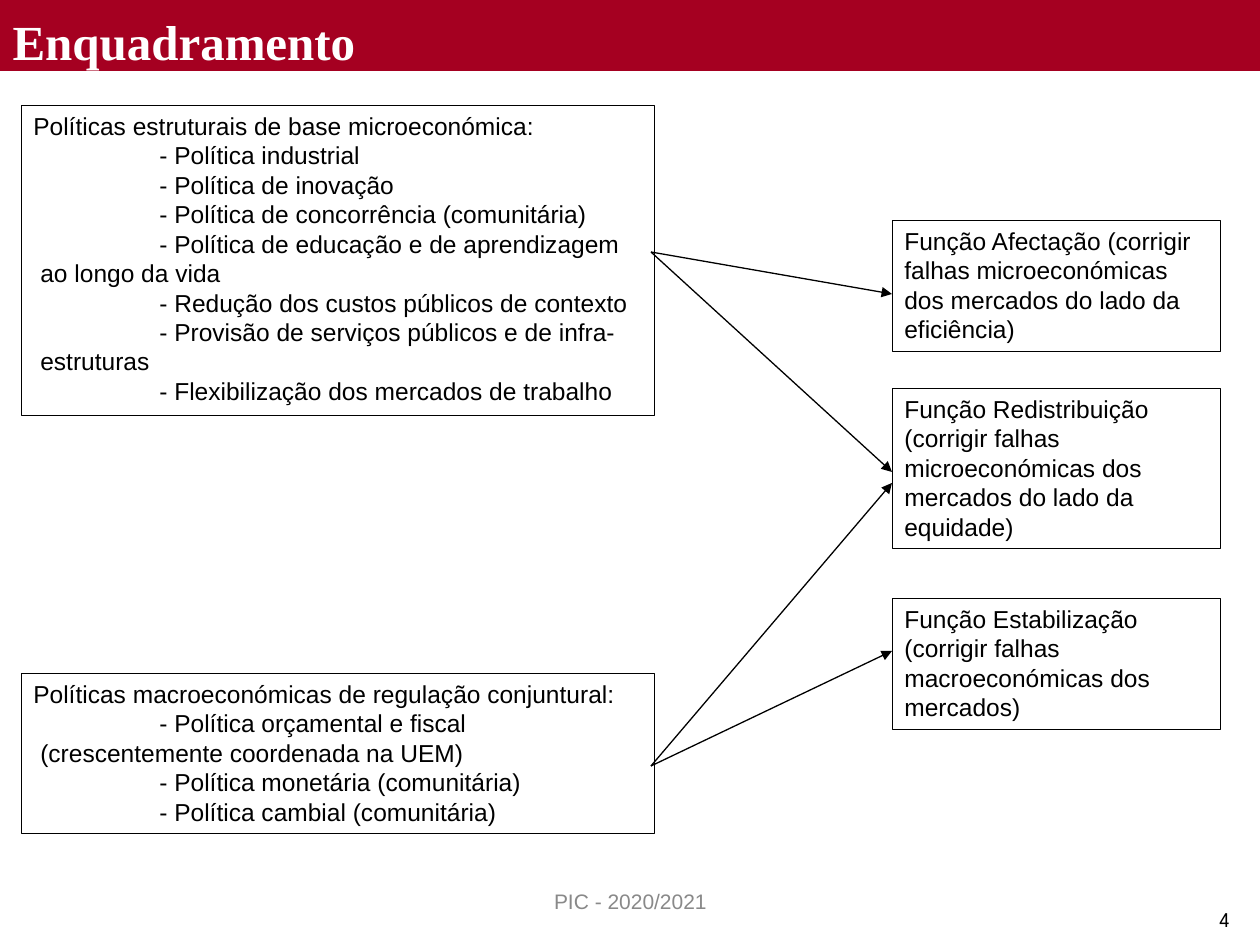
from lxml.etree import SubElement
from pptx import Presentation
from pptx.dml.color import RGBColor
from pptx.enum.shapes import MSO_CONNECTOR as Connector, MSO_SHAPE as Shape
from pptx.enum.text import MSO_ANCHOR as Anchor, MSO_AUTO_SIZE as AutoSize, PP_ALIGN as Align
from pptx.oxml.ns import qn
from pptx.util import Pt

EMU_PER_PX = 914400 / 126
COLORS = {"banner": "A50021", "ink": "000000", "paper": "FFFFFF", "footer": "898989"}

BODY_FONT = {"name": "Arial", "size": Pt(14), "bold": False}
TITLE_FONT = {"name": "Times New Roman", "size": Pt(28), "bold": True}
FOOTER_FONT = {"name": "Arial", "size": Pt(12)}
NUMBER_FONT = {"name": "League Spartan", "size": Pt(12)}

POLICIES = [
    ((21, 105, 633, 310), "Políticas estruturais de base microeconómica:", [
        "Política industrial",
        "Política de inovação",
        "Política de concorrência (comunitária)",
        "Política de educação e de aprendizagem ao longo da vida",
        "Redução dos custos públicos de contexto",
        "Provisão de serviços públicos e de infra-estruturas",
        "Flexibilização dos mercados de trabalho",
    ]),
    ((21, 673, 633, 160), "Políticas macroeconómicas de regulação conjuntural:", [
        "Política orçamental e fiscal (crescentemente coordenada na UEM)",
        "Política monetária (comunitária)",
        "Política cambial (comunitária)",
    ]),
]
FUNCTIONS = [
    (220, 131, "Função Afectação (corrigir falhas microeconómicas dos mercados do lado da eficiência)"),
    (388, 160, "Função Redistribuição (corrigir falhas microeconómicas dos mercados do lado da equidade)"),
    (598, 131, "Função Estabilização (corrigir falhas macroeconómicas dos mercados)"),
]
FUNCTION_LEFT, FUNCTION_WIDTH = 892, 328
ARROW_LEFT = 651
ARROWS = [(252, 472), (252, 294), (766, 651), (766, 483)]


def px(value):
    return round(value * EMU_PER_PX)


def color(name):
    return RGBColor.from_string(COLORS[name])


def apply_format(target, values):
    for name, value in values.items():
        setattr(target, name, value)


def write(shape, lines, font, ink="ink", align=Align.LEFT, anchor=Anchor.TOP, top=6):
    frame = shape.text_frame
    frame.text = "\n".join(lines)
    apply_format(frame, {
        "word_wrap": True, "auto_size": AutoSize.NONE, "vertical_anchor": anchor,
        "margin_top": px(top), "margin_bottom": px(6),
    })
    for paragraph in frame.paragraphs:
        paragraph.alignment = align
        apply_format(paragraph.runs[0].font, font)
        paragraph.runs[0].font.color.rgb = color(ink)


def add_title(slide, text):
    title = slide.shapes.title
    apply_format(title, {"left": 0, "top": 0, "width": px(1260), "height": px(71)})
    title.fill.solid()
    title.fill.fore_color.rgb = color("banner")
    write(title, [text], TITLE_FONT, "paper", top=11)


def add_box(slide, bounds, lines):
    box = slide.shapes.add_shape(Shape.RECTANGLE, *map(px, bounds))
    box.shadow.inherit = False
    box.fill.background()
    box.line.color.rgb = color("ink")
    box.line.width = Pt(0.25)
    write(box, lines, BODY_FONT)
    return box


def add_policy_box(slide, bounds, heading, policies):
    box = add_box(slide, bounds, [heading] + [f"- {policy}" for policy in policies])
    for paragraph in box.text_frame.paragraphs[1:]:
        properties = paragraph._p.get_or_add_pPr()
        properties.set("marL", str(px(7)))
        properties.set("indent", str(px(119)))


def add_arrow(slide, start, end):
    arrow = slide.shapes.add_connector(Connector.STRAIGHT, *map(px, start + end))
    arrow.line.color.rgb = color("ink")
    arrow.line.width = Pt(0.75)
    SubElement(arrow.line._get_or_add_ln(), qn("a:tailEnd"), type="triangle")
    SubElement(arrow._element.spPr, qn("a:effectLst"))


def add_label(slide, bounds, text, font, **options):
    label = slide.shapes.add_textbox(*map(px, bounds))
    write(label, [text], font, **options)


def main():
    presentation = Presentation()
    apply_format(presentation, {"slide_width": px(1260), "slide_height": px(945)})
    slide = presentation.slides.add_slide(presentation.slide_layouts[5])

    add_title(slide, "Enquadramento")
    for bounds, heading, policies in POLICIES:
        add_policy_box(slide, bounds, heading, policies)
    for top, height, text in FUNCTIONS:
        add_box(slide, (FUNCTION_LEFT, top, FUNCTION_WIDTH, height), [text])
    for start, end in ARROWS:
        add_arrow(slide, (ARROW_LEFT, start), (FUNCTION_LEFT, end))
    add_label(slide, (431, 876, 399, 50), "PIC - 2020/2021", FOOTER_FONT,
              ink="footer", align=Align.CENTER, anchor=Anchor.MIDDLE)
    add_label(slide, (980, 901, 262, 32), "4", NUMBER_FONT, align=Align.RIGHT)

    presentation.save("out.pptx")


if __name__ == "__main__":
    main()
